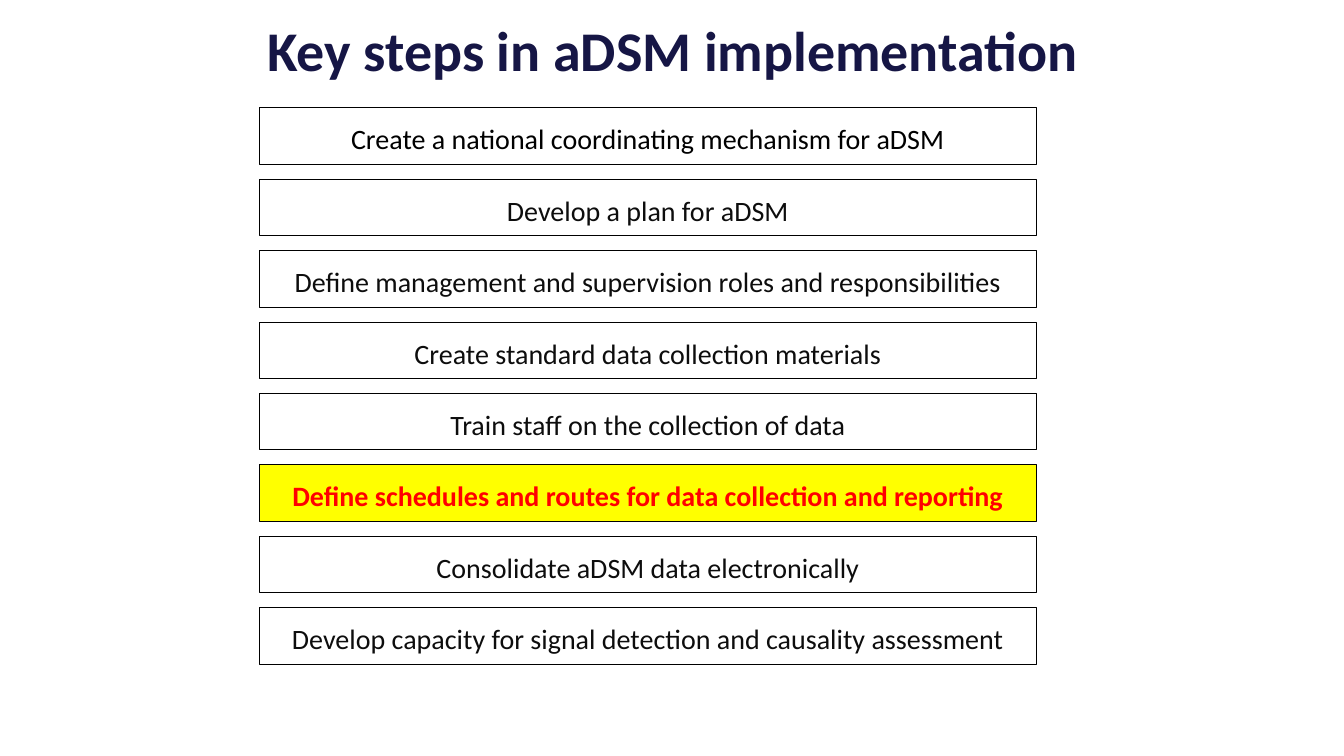
from pptx import Presentation
from pptx.dml.color import RGBColor
from pptx.enum.shapes import MSO_SHAPE
from pptx.enum.text import MSO_ANCHOR, PP_ALIGN
from pptx.util import Inches, Pt

TITLE = "Key steps in aDSM implementation"
STEPS = [
    ("Create a national coordinating mechanism for aDSM", "first"),
    ("Develop a plan for aDSM", "open"),
    ("Define management and supervision roles and responsibilities", "plain"),
    ("Create standard data collection materials", "plain"),
    ("Train staff on the collection of data", "plain"),
    ("Define schedules and routes for data collection and reporting", "current"),
    ("Consolidate aDSM data electronically", "plain"),
    ("Develop capacity for signal detection and causality assessment", "plain"),
]
COLORS = {"navy": "161645", "black": "000000", "ink": "0D0D0D",
          "white": "FFFFFF", "yellow": "FFFF00", "red": "FF0000"}
STYLES = {"first": (None, "black"), "open": (None, "ink"),
          "plain": ("white", "ink"), "current": ("yellow", "red")}
FONT = "Calibri"
LEFT, WIDTH, HEIGHT = 2.57, 7.71, 0.56
FIRST_TOP, LAST_TOP = 1.07, 6.03
PITCH = (LAST_TOP - FIRST_TOP) / (len(STEPS) - 1)


def color(name):
    return RGBColor.from_string(COLORS[name])


def write(sp, text, size, ink, bold):
    tf = sp.text_frame
    tf.text = text
    tf.word_wrap = True
    tf.vertical_anchor = MSO_ANCHOR.MIDDLE
    p = tf.paragraphs[0]
    p.alignment = PP_ALIGN.CENTER
    font = p.runs[0].font
    font.name, font.size, font.bold = FONT, Pt(size), bold
    font.color.rgb = color(ink)
    return p


def add_step(slide, row, text, style):
    fill, ink = STYLES[style]
    sp = slide.shapes.add_shape(
        MSO_SHAPE.RECTANGLE, Inches(LEFT), Inches(FIRST_TOP + row * PITCH),
        Inches(WIDTH), Inches(HEIGHT))
    sp.shadow.inherit = False
    if fill:
        sp.fill.solid()
        sp.fill.fore_color.rgb = color(fill)
    else:
        sp.fill.background()
    sp.line.color.rgb = color("black")
    sp.line.width = Pt(0.75)
    p = write(sp, text, 20, ink, style == "current")
    p.line_spacing = 1.15
    p.space_after = Pt(10)


def main():
    prs = Presentation()
    prs.slide_width, prs.slide_height = Inches(13.33), Inches(7.5)
    slide = prs.slides.add_slide(prs.slide_layouts[5])
    title = slide.shapes.title
    title.left, title.top = Inches(2.1), Inches(0.05)
    title.width, title.height = Inches(9.14), Inches(0.87)
    write(title, TITLE, 40, "navy", True)
    for row, (text, style) in enumerate(STEPS):
        add_step(slide, row, text, style)
    prs.save("out.pptx")


if __name__ == "__main__":
    main()
